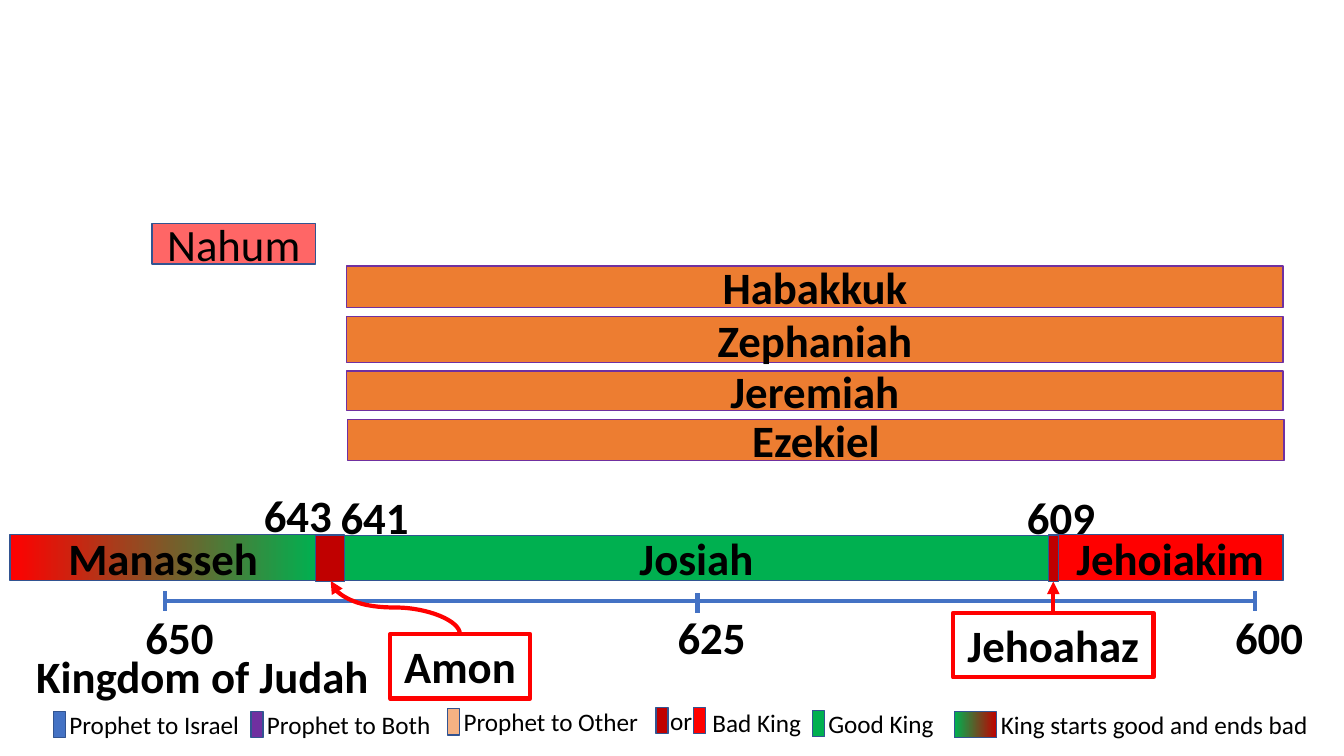
from lxml import etree
from pptx import Presentation
from pptx.dml.color import RGBColor
from pptx.enum.shapes import MSO_CONNECTOR, MSO_SHAPE
from pptx.enum.text import MSO_ANCHOR, MSO_AUTO_SIZE, PP_ALIGN
from pptx.oxml.ns import qn
from pptx.util import Pt

RECT = MSO_SHAPE.RECTANGLE
STRAIGHT, CURVE = MSO_CONNECTOR.STRAIGHT, MSO_CONNECTOR.CURVE
TOP, MIDDLE = MSO_ANCHOR.TOP, MSO_ANCHOR.MIDDLE
LEFT, CENTER = PP_ALIGN.LEFT, PP_ALIGN.CENTER
GROW = MSO_AUTO_SIZE.SHAPE_TO_FIT_TEXT

FONT = "Calibri"
COLORS = {
    "black": "000000", "axis": "4472C4", "edge": "325491",
    "purple": "7030A0", "orange": "ED7D31", "peach": "F4B183",
    "green": "00B050", "red": "FF0000", "dark_red": "C00000",
}

# Name, left, top, width, height
PROPHETS = [
    ("Habakkuk", 247.7, 190.1, 668.9, 29.5),
    ("Zephaniah", 247.7, 226.1, 668.9, 33.1),
    ("Jeremiah", 247.7, 265, 668.9, 28.1),
    ("Ezekiel", 248.4, 299.5, 668.9, 29.5),
]

# Text, left, top, width
REIGN_YEARS = [("643", 181.4, 344.9, 67.7), ("641", 236.2, 346.3, 69.1),
               ("609", 726.5, 346.3, 68.4)]

# Year, axis position, tick centre
TICKS = [("650", 118.1, 429.1), ("625", 498.2, 430.6), ("600", 896.4, 429.1)]

# Swatch left, top, width, fill
SWATCHES = [
    (38.2, 508.3, 8.6, "axis"), (179.3, 508.3, 8.6, "purple"),
    (319.7, 506.2, 8.6, "peach"), (468.7, 505.4, 8.6, "dark_red"),
    (495.4, 505.4, 8.6, "red"), (580.3, 507.6, 8.6, "green"),
    (681.8, 508.3, 30.2, ("green", "dark_red")),
]

# Text, left, top, width
LEGEND = [
    ("Prophet to Israel", 42.5, 503.3, 136.8),
    ("Prophet to Both", 183.6, 503.3, 132.5),
    ("Prophet to Other", 324, 501.1, 140.4),
    ("or", 471.6, 500.4, 30.2),
    ("Bad King", 501.8, 501.8, 78.5),
    ("Good King", 584.6, 502.6, 90.7),
    ("King starts good and ends bad", 707.8, 503.3, 236.2),
]


def rgb(name):
    return RGBColor.from_string(COLORS[name])


def write(shape, text, size, bold, align, anchor, wrap=True):
    tf = shape.text_frame
    tf.word_wrap = wrap
    tf.vertical_anchor = anchor
    p = tf.paragraphs[0]
    p.alignment = align
    r = p.add_run()
    r.text = text
    r.font.name = FONT
    r.font.size = Pt(size)
    r.font.bold = bold
    r.font.color.rgb = rgb("black")


def add_label(s, text, x, y, w, h=46, size=32, bold=True, wrap=False):
    box = s.shapes.add_textbox(Pt(x), Pt(y), Pt(w), Pt(h))
    write(box, text, size, bold, LEFT, TOP, wrap)
    box.text_frame.auto_size = GROW


def add_bar(s, x, y, w, h, fill=None, text=None, line="edge", weight=1,
            bold=True, anchor=MIDDLE):
    """A fill is a colour name, a pair for a gradient, or None."""
    sp = s.shapes.add_shape(RECT, Pt(x), Pt(y), Pt(w), Pt(h))
    sp.shadow.inherit = False
    if fill is None:
        sp.fill.background()
    elif isinstance(fill, tuple):
        sp.fill.gradient()
        sp.fill.gradient_angle = 0
        for stop, name in zip(sp.fill.gradient_stops, fill):
            stop.color.rgb = rgb(name)
    else:
        sp.fill.solid()
        sp.fill.fore_color.rgb = rgb(fill)
    sp.line.color.rgb = rgb(line)
    sp.line.width = Pt(weight)
    if text:
        write(sp, text, 32, bold, CENTER, anchor)
    return sp


def add_callout(s, text, x, y, w):
    sp = add_bar(s, x, y, w, 46, None, text, "red", 3, anchor=TOP)
    sp.text_frame.auto_size = GROW
    return sp


def add_line(s, x1, y1, x2, y2, color, arrow=False, kind=STRAIGHT):
    cx = s.shapes.add_connector(kind, Pt(x1), Pt(y1), Pt(x2), Pt(y2))
    cx.line.color.rgb = rgb(color)
    cx.line.width = Pt(3)
    if arrow:
        tail = etree.SubElement(cx.line._get_or_add_ln(), qn("a:tailEnd"))
        tail.set("type", "triangle")
    etree.SubElement(cx._element.spPr, qn("a:effectLst"))
    return cx


def add_upward_curve(s, x1, y1, x2, y2, color):
    """A curve that leaves and arrives vertically: a turned, flipped S."""
    mid_x, mid_y = (x1 + x2) / 2, (y1 + y2) / 2
    half_w, half_h = abs(y2 - y1) / 2, abs(x2 - x1) / 2
    cx = add_line(s, mid_x - half_w, mid_y - half_h,
                  mid_x + half_w, mid_y + half_h, color, True, CURVE)
    xfrm = cx._element.spPr.find(qn("a:xfrm"))
    xfrm.set("rot", str(270 * 60000))
    xfrm.set("flipV", "1")


def set_alpha(sp, percent):
    color = sp._element.spPr.find(qn("a:solidFill"))[0]
    etree.SubElement(color, qn("a:alpha")).set("val", str(percent * 1000))


def main():
    prs = Presentation()
    prs.slide_width, prs.slide_height = Pt(960), Pt(540)
    s = prs.slides.add_slide(prs.slide_layouts[6])

    # Legend
    for x, y, w, fill in SWATCHES:
        add_bar(s, x, y, w, 18.7, fill)
    for text, x, y, w in LEGEND:
        add_label(s, text, x, y, w, 29, 18, False)

    # Time axis
    add_line(s, TICKS[0][1], 429.1, TICKS[-1][1], 429.1, "axis")
    for year, x, y in TICKS:
        add_line(s, x, y + 7.2, x, y - 7.2, "axis")
        add_label(s, year, x - 21.3, 432, 64.1)

    # Kings of Judah
    add_bar(s, 7.2, 381.6, 218.9, 33.1, ("red", "green"), "Manasseh")
    add_label(s, "Kingdom of Judah", 18.7, 460.1, 479.5, wrap=True)
    add_bar(s, 225.4, 382.3, 20.9, 33.1, "dark_red")
    add_bar(s, 246.2, 382.3, 502.6, 32.4, "green", "Josiah")
    for text, x, y, w in REIGN_YEARS:
        add_label(s, text, x, y, w, wrap=True)
    add_bar(s, 755.3, 381.6, 161.3, 33.1, "red", "Jehoiakim")
    jehoahaz_bar = add_bar(s, 748.8, 382.3, 7.2, 33.1, "dark_red")

    # Callouts for the short reigns
    add_callout(s, "Amon", 278.6, 452.9, 100.1)
    add_upward_curve(s, 328.5, 452.9, 236.2, 415, "red")
    jehoahaz = add_callout(s, "Jehoahaz", 680.75, 437.8, 143.3)
    arrow = add_line(s, 752.4, 437.8, 752.4, 415.4, "red", True)
    arrow.begin_connect(jehoahaz, 0)
    arrow.end_connect(jehoahaz_bar, 2)

    # Prophets
    for name, x, y, w, h in PROPHETS:
        add_bar(s, x, y, w, h, "orange", name, "purple")
    nahum = add_bar(s, 108.7, 159.8, 116.6, 28.8, "red", "Nahum", bold=False)
    set_alpha(nahum, 60)

    prs.save("out.pptx")


if __name__ == "__main__":
    main()
